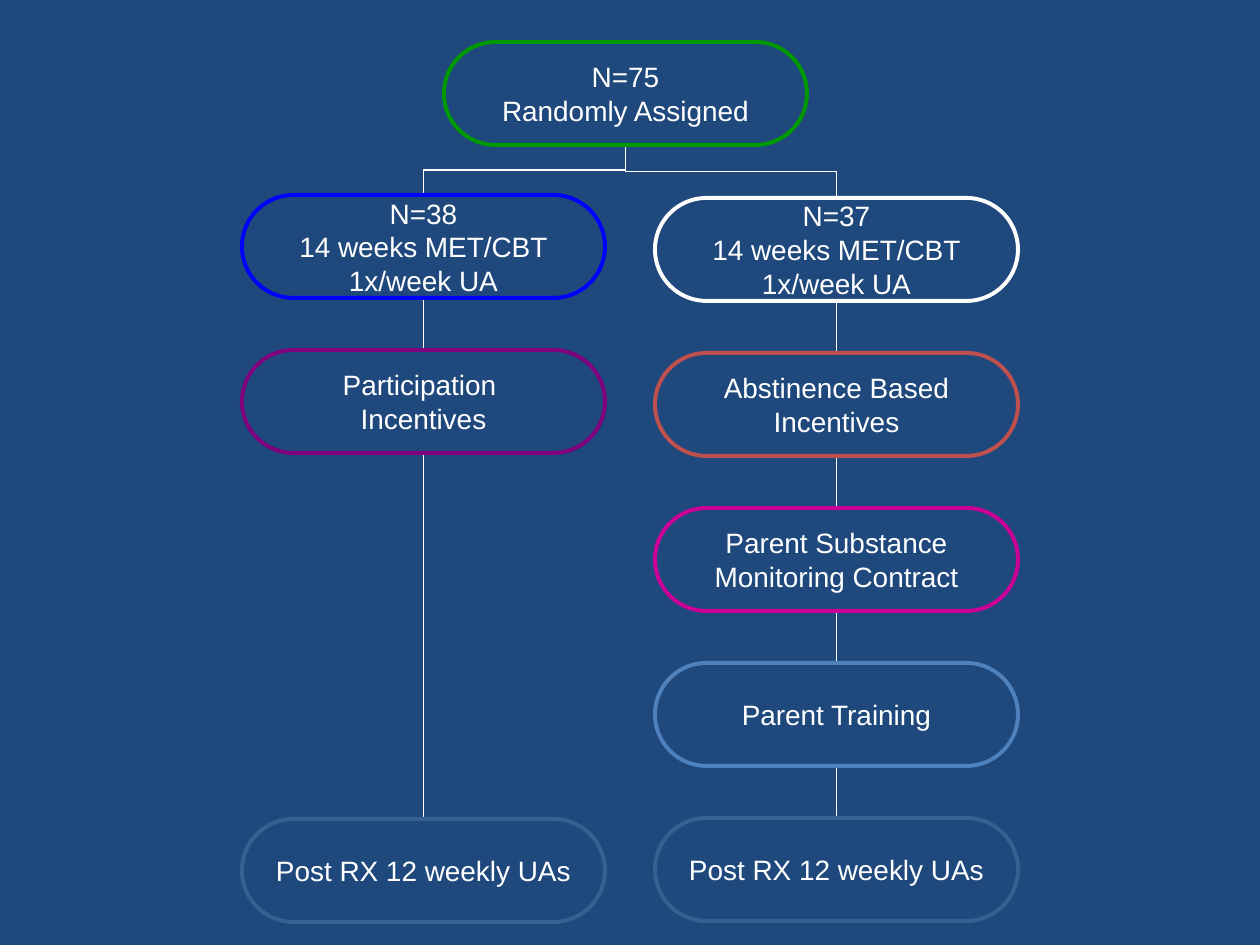
from lxml import etree
from pptx import Presentation
from pptx.dml.color import RGBColor as RGB
from pptx.enum.shapes import MSO_CONNECTOR as CXN, MSO_SHAPE as SHAPE
from pptx.enum.text import MSO_ANCHOR as ANCHOR, PP_ALIGN as ALIGN
from pptx.oxml.ns import qn
from pptx.util import Emu, Pt

PX = 914400 / 126
TOP, LEFT, BOTTOM, RIGHT = range(4)
BOX_W, BOX_H = 363, 103
LEFT_X, RIGHT_X, ROOT_X = 242, 655, 444
ROW_STEP = 155
NAVY = RGB(0x1F, 0x49, 0x7D)
WHITE = RGB(0xFF, 0xFF, 0xFF)
GREEN = RGB(0x00, 0x99, 0x00)
BLUE = RGB(0x00, 0x00, 0xFF)
PURPLE = RGB(0x80, 0x00, 0x80)
RED = RGB(0xC0, 0x50, 0x4D)
MAGENTA = RGB(0xCC, 0x00, 0x99)
SKY = RGB(0x4F, 0x81, 0xBD)
STEEL = RGB(0x37, 0x60, 0x92)


def px(n):
    return Emu(round(n * PX))


class FlowChart:
    font, size = "Arial", Pt(16)
    border, rule = Pt(2.25), Pt(0.75)

    def __init__(self, prs):
        self.s = prs.slides.add_slide(prs.slide_layouts[6])
        fill = self.s.background.fill
        fill.solid()
        fill.fore_color.rgb = NAVY

    def box(self, x, y, color, lines, inset=0):
        sp = self.s.shapes.add_shape(
            SHAPE.ROUNDED_RECTANGLE, px(x), px(y), px(BOX_W), px(BOX_H))
        sp.adjustments[0] = 0.5
        sp.shadow.inherit = False
        sp.fill.background()
        sp.line.color.rgb = color
        sp.line.width = self.border
        tf = sp.text_frame
        tf.word_wrap = False
        tf.vertical_anchor = ANCHOR.MIDDLE
        tf.margin_left = tf.margin_right = px(inset)
        tf.margin_top = tf.margin_bottom = 0
        for i, line in enumerate(lines):
            p = tf.add_paragraph() if i else tf.paragraphs[0]
            p.alignment = ALIGN.CENTER
            r = p.add_run()
            r.text = line
            r.font.name = self.font
            r.font.size = self.size
            r.font.color.rgb = WHITE
        return sp

    def line(self, kind=CXN.STRAIGHT, ends=(0, 0, 0, 0), color=WHITE):
        c = self.s.shapes.add_connector(kind, *map(px, ends))
        c.line.color.rgb = color
        c.line.width = self.rule
        etree.SubElement(c._element.spPr, qn("a:effectLst"))
        self.s.shapes._spTree.insert(2, c._element)
        return c

    def link(self, child, parent, kind=CXN.STRAIGHT):
        c = self.line(kind)
        c.begin_connect(child, TOP)
        c.end_connect(parent, BOTTOM)
        return c

    def branch(self, child, parent):
        c = self.link(child, parent, CXN.ELBOW)
        mid_x, mid_y = c.left + c.width // 2, c.top + c.height // 2
        c.width, c.height = c.height, c.width
        c.left, c.top = mid_x - c.width // 2, mid_y - c.height // 2
        on_left = child.left < parent.left
        xfrm = c._element.spPr.find(qn("a:xfrm"))
        xfrm.set("rot", "5400000" if on_left else "16200000")
        xfrm.set("flipH", "1" if on_left else "0")
        xfrm.set("flipV", "1")


def main():
    prs = Presentation()
    prs.slide_width, prs.slide_height = px(1260), px(945)
    chart = FlowChart(prs)

    root = chart.box(ROOT_X, 42, GREEN, ["N=75", "Randomly Assigned"])
    treatment = ["14 weeks MET/CBT", "1x/week UA"]
    follow_up = ["Post RX 12 weekly UAs"]
    participation = [
        chart.box(LEFT_X, 195, BLUE, ["N=38"] + treatment),
        chart.box(LEFT_X, 350, PURPLE, ["Participation ", "Incentives"]),
        chart.box(LEFT_X, 819, STEEL, follow_up, 11),
    ]
    steps = [
        (WHITE, ["N=37"] + treatment, 0),
        (RED, ["Abstinence Based", "Incentives"], 0),
        (MAGENTA, ["Parent Substance", "Monitoring Contract"], 11),
        (SKY, ["Parent Training"], 11),
        (STEEL, follow_up, 11),
    ]
    abstinence = [chart.box(RIGHT_X, 198 + i * ROW_STEP, *step)
                  for i, step in enumerate(steps)]

    chart.branch(participation[0], root)
    chart.line(ends=(627, 170, 625, 146), color=NAVY)
    chart.branch(abstinence[0], root)
    for arm in (participation, abstinence):
        for parent, child in zip(arm, arm[1:]):
            chart.link(child, parent)

    prs.save("out.pptx")


if __name__ == "__main__":
    main()
